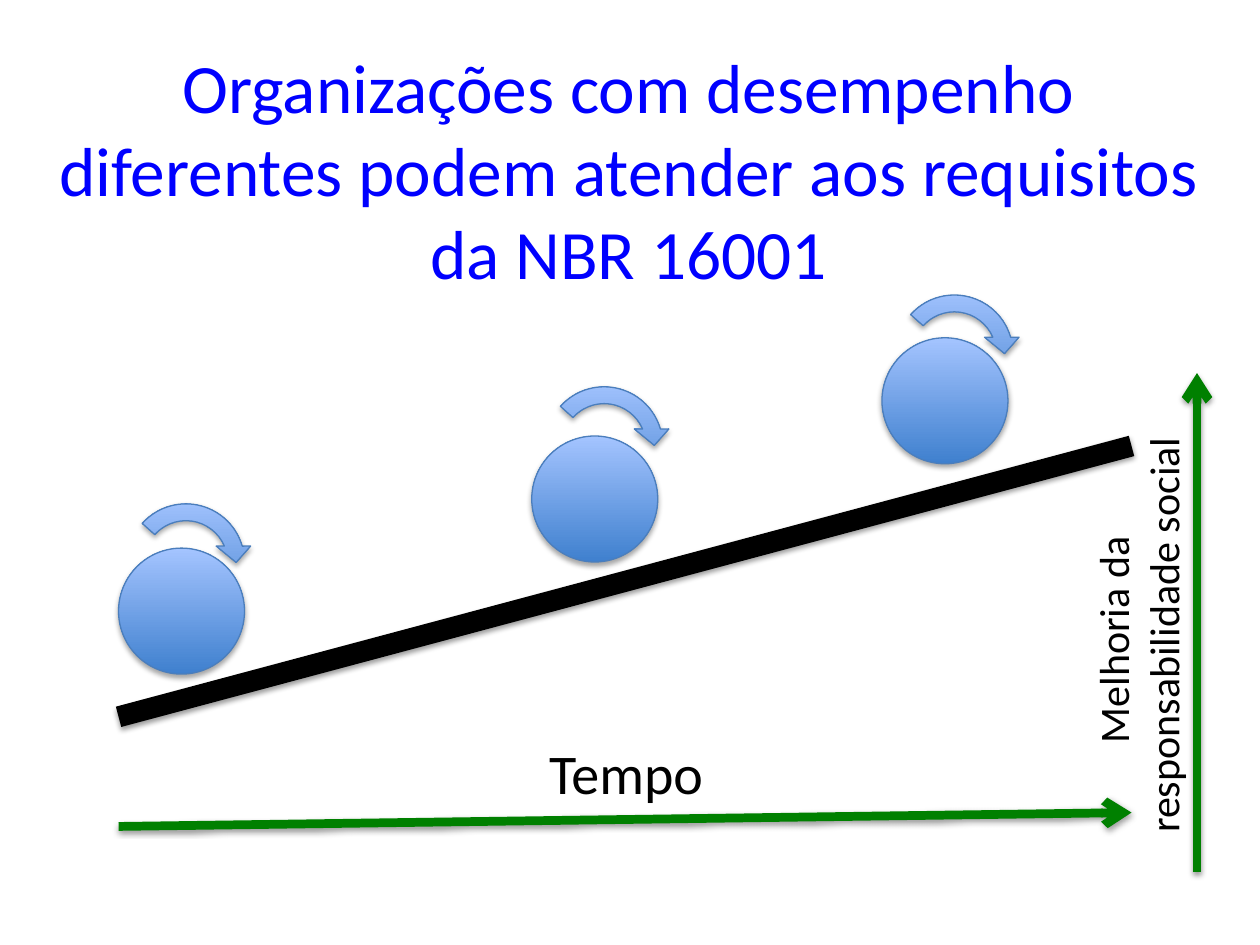
from lxml import etree
from pptx import Presentation
from pptx.dml.color import RGBColor
from pptx.enum import shapes, text
from pptx.oxml import ns
from pptx.util import Cm, Pt

FONT = "Calibri"
BLACK = RGBColor(0x00, 0x00, 0x00)
TITLE_BLUE = RGBColor(0x00, 0x00, 0xFF)
GREEN = RGBColor(0x00, 0x80, 0x00)
BALL_DARK = RGBColor(0x3F, 0x80, 0xCE)
BALL_LIGHT = RGBColor(0xA4, 0xC4, 0xFF)
BALL_EDGE = RGBColor(0x4B, 0x7E, 0xBC)

BALL_SIZE = 2.54
ARROW_SIZE = 2.72
ARROW_ADJUSTMENTS = (0.125, 11.423, 204.577, 133.081, 0.128)
# left and top of each ball, then left and top of its rolling arrow
STAGES = (
    (2.39, 11.05, 2.39, 9.98),
    (10.72, 8.79, 10.82, 7.62),
    (17.78, 6.81, 17.88, 5.77),
)


def add_shadow(shape, opacity, distance):
    """Give the shape a soft black shadow that falls straight down."""
    effects = etree.SubElement(shape._element.spPr, ns.qn("a:effectLst"))
    shadow = etree.SubElement(
        effects, ns.qn("a:outerShdw"), blurRad=str(Pt(3.1)),
        dist=str(Pt(distance)), dir="5400000", rotWithShape="0")
    color = etree.SubElement(shadow, ns.qn("a:srgbClr"), val=str(BLACK))
    etree.SubElement(color, ns.qn("a:alpha"), val=str(opacity * 1000))


def format_text(text_frame, size, color, alignment):
    """Format every run of the text frame alike."""
    for paragraph in text_frame.paragraphs:
        paragraph.alignment = alignment
        for run in paragraph.runs:
            run.font.name = FONT
            run.font.size = Pt(size)
            run.font.color.rgb = color


def set_title(slide, wording):
    """Fill and place the title placeholder."""
    title = slide.shapes.title
    title.left, title.top = Cm(0.56), Cm(0.76)
    title.width, title.height = Cm(24.23), Cm(3.18)
    frame = title.text_frame
    frame.text = wording
    frame.auto_size = text.MSO_AUTO_SIZE.NONE
    frame.vertical_anchor = text.MSO_ANCHOR.TOP
    format_text(frame, 39.6, TITLE_BLUE, text.PP_ALIGN.CENTER)


def add_line(slide, start, end, color, width, arrow=False):
    """Draw a shadowed straight line, with an arrowhead at its end if asked."""
    line = slide.shapes.add_connector(
        shapes.MSO_CONNECTOR.STRAIGHT, *map(Cm, start + end))
    line.line.color.rgb = color
    line.line.width = Pt(width)
    if arrow:
        etree.SubElement(line.line._get_or_add_ln(), ns.qn("a:tailEnd"), type="arrow")
    add_shadow(line, 38, 1.6)


def add_glossy_shape(slide, kind, left, top, size):
    """Add a square-framed shape with the blue gradient and return it."""
    shape = slide.shapes.add_shape(kind, Cm(left), Cm(top), Cm(size), Cm(size))
    shape.fill.gradient()
    shape.fill.gradient_angle = 90
    for stop, color, position in zip(
            shape.fill.gradient_stops, (BALL_DARK, BALL_LIGHT), (0, 1)):
        stop.color.rgb = color
        stop.position = position
    shape.line.color.rgb = BALL_EDGE
    shape.line.width = Pt(0.75)
    add_shadow(shape, 35, 1.8)
    return shape


def add_rolling_ball(slide, ball_left, ball_top, arrow_left, arrow_top):
    """Add a ball and the curved arrow that shows it rolling."""
    add_glossy_shape(slide, shapes.MSO_SHAPE.OVAL, ball_left, ball_top, BALL_SIZE)
    arrow = add_glossy_shape(
        slide, shapes.MSO_SHAPE.CIRCULAR_ARROW, arrow_left, arrow_top, ARROW_SIZE)
    for index, value in enumerate(ARROW_ADJUSTMENTS):
        arrow.adjustments[index] = value


def add_label(slide, wording, box, size, alignment, upward=False):
    """Add an axis label, reading upward if asked."""
    frame = slide.shapes.add_textbox(*map(Cm, box)).text_frame
    frame.text = wording
    frame.word_wrap = False
    frame.auto_size = text.MSO_AUTO_SIZE.SHAPE_TO_FIT_TEXT
    if upward:
        frame._txBody.bodyPr.set("vert", "vert270")
    format_text(frame, size, BLACK, alignment)


def main():
    """Build the slide and save it."""
    presentation = Presentation()
    presentation.slide_width, presentation.slide_height = Cm(25.4), Cm(19.05)
    slide = presentation.slides.add_slide(presentation.slide_layouts[5])
    set_title(slide, "Organizações com desempenho diferentes podem "
                     "atender aos requisitos da NBR 16001")
    add_line(slide, (2.39, 14.45), (22.81, 8.99), BLACK, 12)
    add_line(slide, (2.39, 16.66), (22.81, 16.38), GREEN, 5, arrow=True)
    add_line(slide, (24.13, 17.58), (24.13, 7.52), GREEN, 5, arrow=True)
    add_label(slide, "Tempo", (10.82, 14.76, 3.73, 1.63), 32, text.PP_ALIGN.LEFT)
    add_label(slide, "Melhoria da \nresponsabilidade social",
              (21.79, 8.64, 2.57, 8.33), 24, text.PP_ALIGN.CENTER, upward=True)
    for stage in STAGES:
        add_rolling_ball(slide, *stage)
    presentation.save("out.pptx")


if __name__ == "__main__":
    main()
